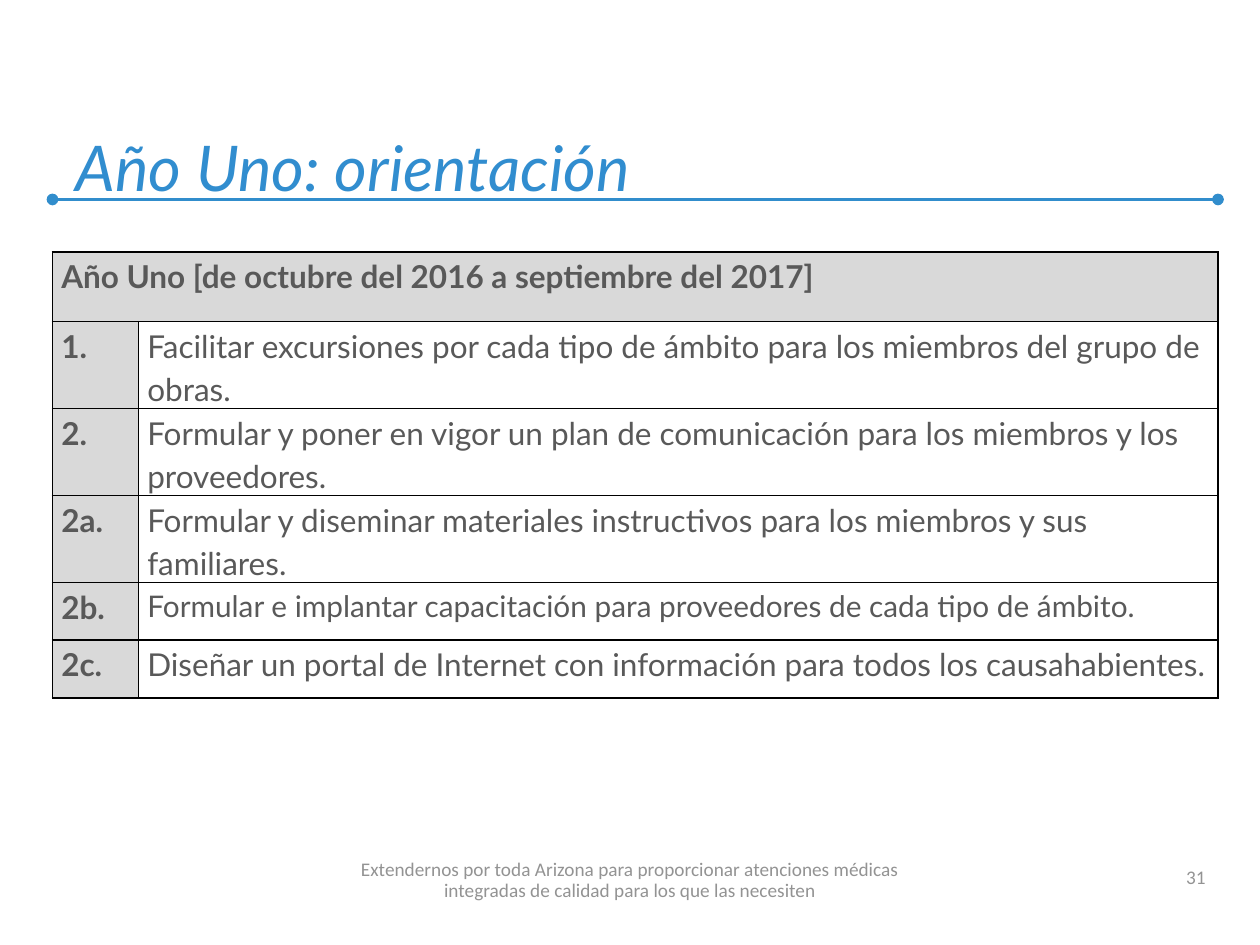
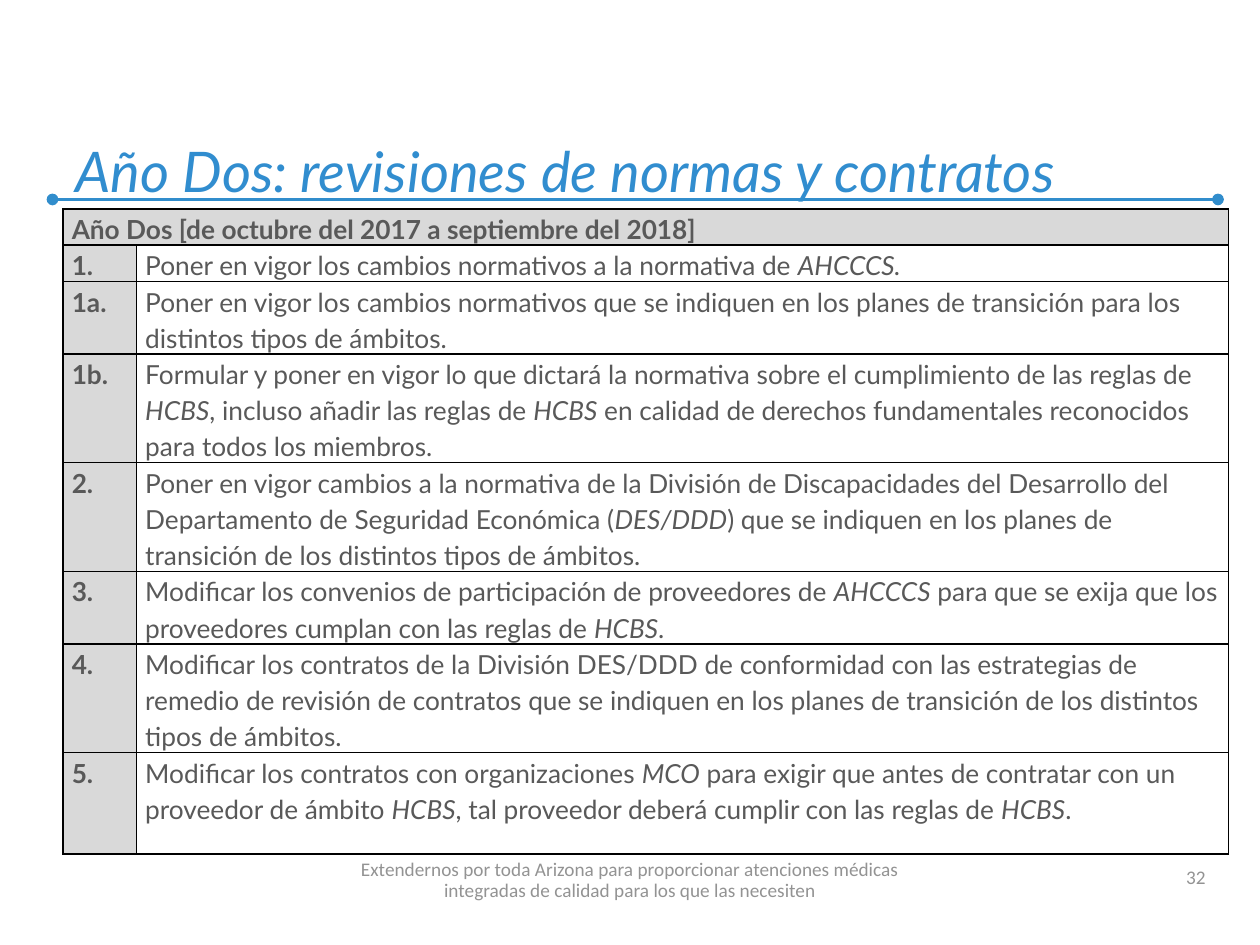
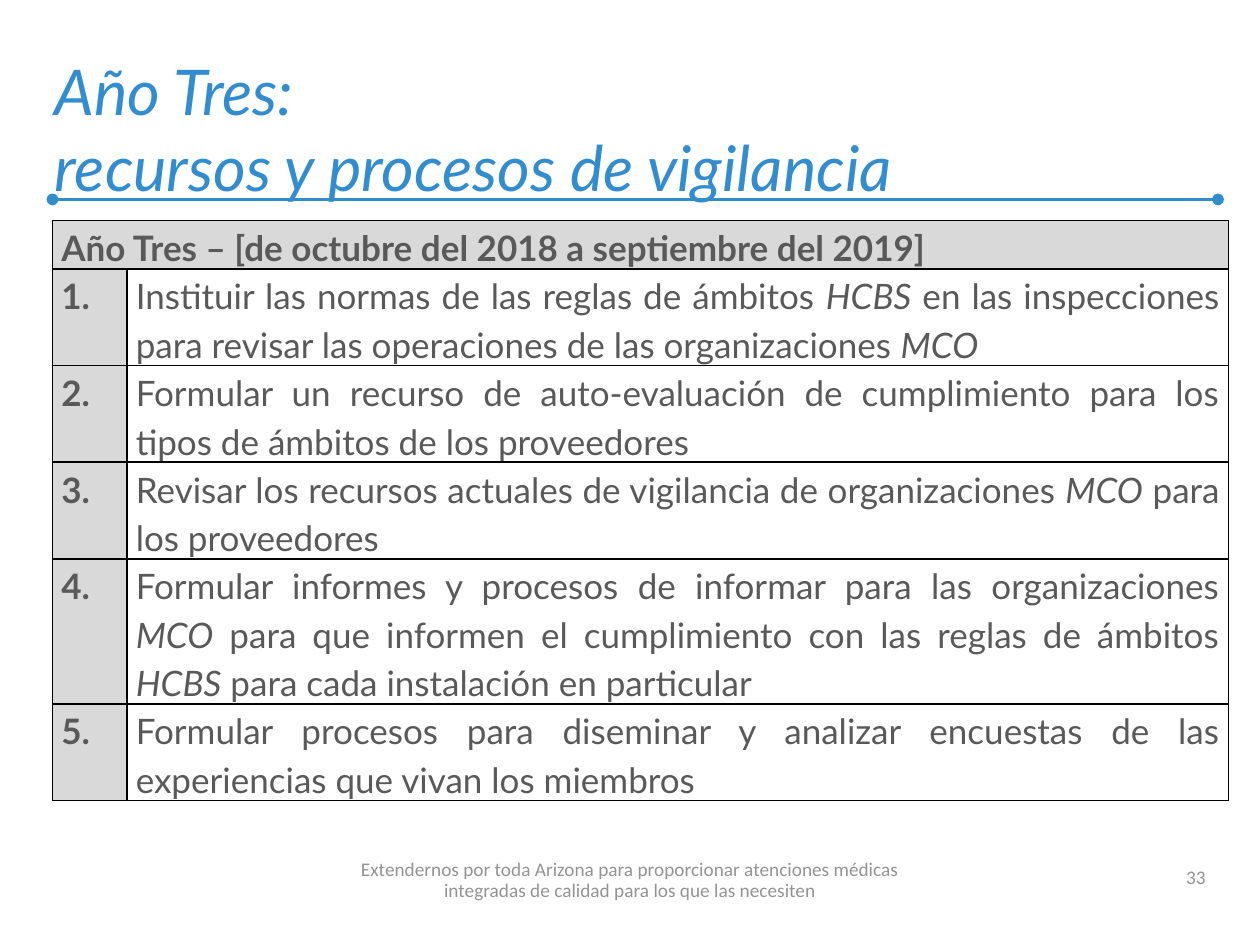
import pptx
import pptx.chart.data
import pptx.dml.color
import pptx.enum.shapes
import pptx.enum.text
import pptx.oxml
import pptx.oxml.ns
import pptx.util
from lxml import etree

RGB = pptx.dml.color.RGBColor
BLUE = RGB(0x31, 0x8D, 0xCF)
RULE = RGB(0x31, 0x8D, 0xCC)
GREY = RGB(0x93, 0x93, 0x93)
TEXT = RGB(0x59, 0x59, 0x59)
BAND = RGB(0xD9, 0xD9, 0xD9)
ALIGN = pptx.enum.text.PP_ALIGN
BOTTOM = pptx.enum.text.MSO_ANCHOR.BOTTOM

COLS, ROWS = 120, 90  # slide grid
LEADING = 1.15
MOTTO = ("Extendernos por toda Arizona para proporcionar atenciones médicas\v"
         "integradas de calidad para los que las necesiten")

# Table rows: label, text (*italic*), height in lines of text, own size if any
YEAR_ONE = [
    ("1.", "Facilitar excursiones por cada tipo de ámbito para los miembros del "
           "grupo de obras.", 2),
    ("2.", "Formular y poner en vigor un plan de comunicación para los miembros "
           "y los proveedores.", 2),
    ("2a.", "Formular y diseminar materiales instructivos para los miembros y "
            "sus familiares.", 2),
    ("2b.", "Formular e implantar capacitación para proveedores de cada tipo de "
            "ámbito.", 1.33, 17),
    ("2c.", "Diseñar un portal de Internet con información para todos los "
            "causahabientes.", 1.33),
]
YEAR_TWO = [
    ("1.", "Poner en vigor los cambios normativos a la normativa de *AHCCCS.*", 1),
    ("1a.", "Poner en vigor los cambios normativos que se indiquen en los planes "
            "de transición para los distintos tipos de ámbitos.", 2),
    ("1b.", "Formular y poner en vigor lo que dictará la normativa sobre el "
            "cumplimiento de las reglas de *HCBS*, incluso añadir las reglas de "
            "*HCBS* en calidad de derechos fundamentales reconocidos para todos "
            "los miembros.", 3),
    ("2.", "Poner en vigor cambios a la normativa de la División de "
           "Discapacidades del Desarrollo del Departamento de Seguridad "
           "Económica (*DES/DDD*) que se indiquen en los planes de transición "
           "de los distintos tipos de ámbitos.", 3),
    ("3.", "Modificar los convenios de participación de proveedores de *AHCCCS* "
           "para que se exija que los proveedores cumplan con las reglas de "
           "*HCBS*.", 2),
    ("4.", "Modificar los contratos de la División DES/DDD de conformidad con "
           "las estrategias de remedio de revisión de contratos que se indiquen "
           "en los planes de transición de los distintos tipos de ámbitos.", 3),
    ("5.", "Modificar los contratos con organizaciones *MCO* para exigir que "
           "antes de contratar con un proveedor de ámbito *HCBS*, tal proveedor "
           "deberá cumplir con las reglas de *HCBS*.", 2.8),
]
YEAR_THREE = [
    ("1.", "Instituir las normas de las reglas de ámbitos *HCBS* en las "
           "inspecciones para revisar las operaciones de las organizaciones "
           "*MCO*", 2),
    ("2.", "Formular un recurso de auto-evaluación de cumplimiento para los "
           "tipos de ámbitos de los proveedores", 2),
    ("3.", "Revisar los recursos actuales de vigilancia de organizaciones *MCO* "
           "para los proveedores", 2),
    ("4.", "Formular informes y procesos de informar para las organizaciones "
           "*MCO* para que informen el cumplimiento con las reglas de ámbitos "
           "*HCBS* para cada instalación en particular", 3),
    ("5.", "Formular procesos para diseminar y analizar encuestas de las "
           "experiencias que vivan los miembros", 2),
]

deck = pptx.Presentation()
deck.slide_width = pptx.util.Inches(10)
deck.slide_height = pptx.util.Inches(7.5)


def across(n):
    return round(deck.slide_width * n / COLS)


def down(n):
    return round(deck.slide_height * n / ROWS)


def style(font, name, size, color, bold=False, italic=False):
    font.name, font.size = name, pptx.util.Pt(size)
    font.bold, font.italic = bold, italic
    font.color.rgb = color


def add_title(slide, text, size, left, width):
    title = slide.shapes.title
    title.left, title.top = across(left), down(4)
    title.width, title.height = across(width), down(16)
    frame = title.text_frame
    frame.text = text
    frame.vertical_anchor = BOTTOM
    frame.auto_size = pptx.enum.text.MSO_AUTO_SIZE.NONE
    para = frame.paragraphs[0]
    para.alignment = ALIGN.LEFT
    for run in para.runs:
        style(run.font, "Lato", size, BLUE, italic=True)


def add_rule(slide):
    """Draw the line under the title, with a dot at each end."""
    rule = slide.shapes.add_connector(
        pptx.enum.shapes.MSO_CONNECTOR.STRAIGHT,
        across(5), down(19), across(116), down(19))
    rule.line.color.rgb = RULE
    rule.line.width = pptx.util.Pt(2.25)
    line = rule.line._get_or_add_ln()
    for end in ("a:headEnd", "a:tailEnd"):
        etree.SubElement(line, pptx.oxml.ns.qn(end), type="oval")
    etree.SubElement(rule._element.spPr, pptx.oxml.ns.qn("a:effectLst"))


def add_note(slide, text, left, width, height, align, leading=None):
    """Add a small grey text at the foot of the slide."""
    box = slide.shapes.add_textbox(
        across(left), down(81.4), across(width), down(height))
    frame = box.text_frame
    frame.word_wrap = True
    frame.vertical_anchor = BOTTOM
    frame.text = text
    para = frame.paragraphs[0]
    para.alignment = align
    if leading:
        para.line_spacing = pptx.util.Pt(leading)
    for run in para.runs:
        style(run.font, "Calibri", 11, GREY)


def add_edges(cell):
    for side in "LRTB":
        cell._tc.get_or_add_tcPr().append(pptx.oxml.parse_xml(
            f'<a:ln{side} {pptx.oxml.ns.nsdecls("a")} w="12700"><a:solidFill>'
            f'<a:srgbClr val="000000"/></a:solidFill></a:ln{side}>'))


def fill_cell(cell, text, size, align, head=False):
    add_edges(cell)
    cell.margin_left = cell.margin_right = pptx.util.Inches(0.07)
    cell.margin_top = cell.margin_bottom = 0
    if head:
        cell.fill.solid()
        cell.fill.fore_color.rgb = BAND
    else:
        cell.fill.background()
    para = cell.text_frame.paragraphs[0]
    para.alignment = align
    para.line_spacing = LEADING
    para.space_after = pptx.util.Pt(10)
    for i, part in enumerate(text.split("*")):
        if part:
            run = para.add_run()
            run.text = part
            style(run.font, "Lato", size, TEXT, head, i % 2 == 1)


def add_plan(slide, head, items, size, place, first, lines=1, align=ALIGN.LEFT):
    """Add the year's table; place is left, top and width in grid units."""
    left, top, width = place
    counts = [lines] + [item[2] for item in items]
    pitch = pptx.util.Pt(size * 1.2 * LEADING)
    table = slide.shapes.add_table(
        len(counts), 2, across(left), down(top), across(width),
        round(pitch * sum(counts))).table
    table.first_row = table.horz_banding = False
    table.columns[0].width = across(first)
    table.columns[1].width = across(width - first)
    for row, count in zip(table.rows, counts):
        row.height = round(pitch * count)
    table.cell(0, 0).merge(table.cell(0, 1))
    fill_cell(table.cell(0, 0), head, size, ALIGN.JUSTIFY, True)
    add_edges(table.cell(0, 1))
    for i, (label, text, _, *own) in enumerate(items, 1):
        fill_cell(table.cell(i, 0), label, size, ALIGN.JUSTIFY, True)
        fill_cell(table.cell(i, 1), text, own[0] if own else size, align)


def add_slide(number, title, size, left=6, width=109):
    slide = deck.slides.add_slide(deck.slide_layouts[5])
    add_title(slide, title, size, left, width)
    add_rule(slide)
    add_note(slide, str(number), 88, 28, 3.8, ALIGN.RIGHT)
    add_note(slide, MOTTO, 0, COLS, 5, ALIGN.CENTER, 12)
    return slide


def main():
    one = add_slide(31, "Año Uno: orientación", 36)
    add_plan(one, "Año Uno [de octubre del 2016 a septiembre del 2017]",
             YEAR_ONE, 18, (5, 24, 111), 8.2, lines=1.6)
    two = add_slide(32, "Año Dos: revisiones de normas y contratos", 32)
    add_plan(two, "Año Dos [de octubre del 2017 a septiembre del 2018]",
             YEAR_TWO, 15, (6, 19.9, 111), 7)
    three = add_slide(33, "Año Tres:\vrecursos y procesos de vigilancia", 36,
                      4, 113)
    add_plan(three, "Año Tres – [de octubre del 2018 a septiembre del 2019]",
             YEAR_THREE, 20, (5, 21, 112), 7.1, align=ALIGN.JUSTIFY)
    deck.save("out.pptx")


if __name__ == "__main__":
    main()
